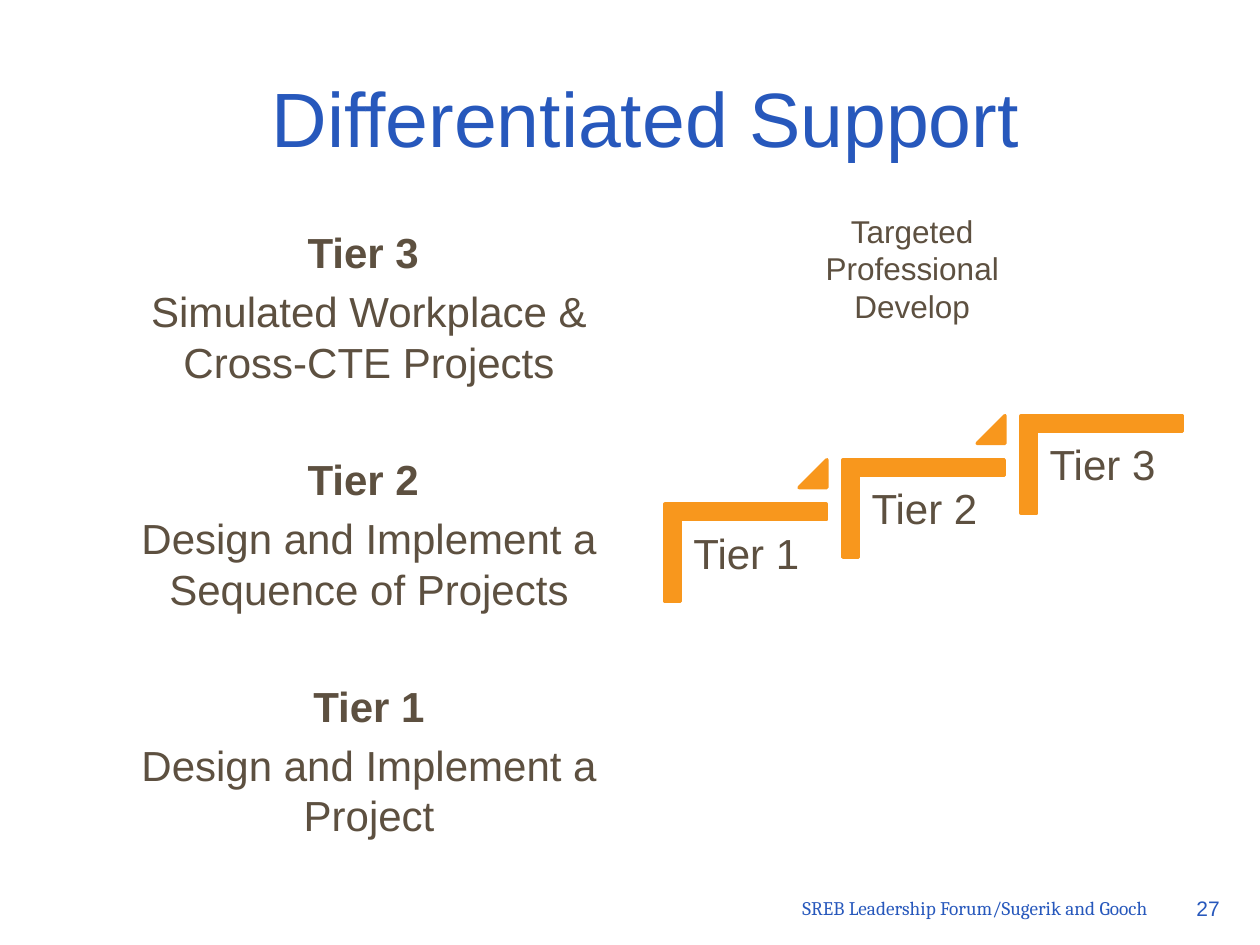
"""Build the Differentiated Support slide with its staircase of three tiers."""
from dataclasses import dataclass

from pptx import Presentation
from pptx import util as u
from pptx.dml import color
from pptx.enum import shapes, text

BLUE, BROWN, ORANGE = "2758BC", "5D5040", "F8971D"
CENTER, RIGHT, LEFT = text.PP_ALIGN.CENTER, text.PP_ALIGN.RIGHT, text.PP_ALIGN.LEFT
TOP, MIDDLE = text.MSO_ANCHOR.TOP, text.MSO_ANCHOR.MIDDLE
STEP_RUN, STEP_RISE = 3.59, 0.89


@dataclass
class Frame:
    left: float
    top: float
    width: float
    height: float

    def lengths(self) -> list[u.Length]:
        return [u.Cm(side) for side in (self.left, self.top, self.width, self.height)]


@dataclass
class Style:
    size: float
    hue: str
    align: text.PP_ALIGN = CENTER
    anchor: text.MSO_ANCHOR = TOP
    font: str = "Arial"


@dataclass
class Tier:
    name: str
    detail: str


TIERS = [
    Tier("Tier 3 ", "Simulated Workplace & Cross-CTE Projects"),
    Tier("Tier 2 ", "Design and Implement a Sequence of Projects"),
    Tier("Tier 1", "Design and Implement a Project"),
]


def rgb(value: str) -> color.RGBColor:
    return color.RGBColor.from_string(value)


def format_paragraph(para, style: Style, bold: bool = False) -> None:
    para.alignment = style.align
    for span in para.runs:
        span.font.size = u.Pt(style.size)
        span.font.name = style.font
        span.font.bold = bold
        span.font.color.rgb = rgb(style.hue)


def add_text(parent, frame: Frame, words: str, style: Style):
    box = parent.add_textbox(*frame.lengths())
    box.text_frame.word_wrap = True
    box.text_frame.vertical_anchor = style.anchor
    box.text_frame.text = words
    for para in box.text_frame.paragraphs:
        format_paragraph(para, style)
    return box


def add_tier_list(page, frame: Frame, tiers: list[Tier]) -> None:
    style = Style(24, BROWN)
    lines = [line for tier in tiers for line in (tier.name, tier.detail)]
    box = add_text(page.shapes, frame, "\n".join(lines), style)
    for index, para in enumerate(box.text_frame.paragraphs):
        is_name = index % 2 == 0
        format_paragraph(para, style, bold=is_name)
        if index:
            para.space_before = u.Pt(38.5 if is_name else 4.8)


def add_orange_shape(parent, kind, frame: Frame, adjustments: list[float]):
    shape = parent.add_shape(kind, *frame.lengths())
    for index, value in enumerate(adjustments):
        shape.adjustments[index] = value
    shape.shadow.inherit = False
    shape.fill.solid()
    shape.fill.fore_color.rgb = rgb(ORANGE)
    shape.line.color.rgb = rgb(ORANGE)
    shape.line.width = u.Pt(2)
    return shape


def add_staircase(page, names: list[str]) -> None:
    stairs = page.shapes.add_group_shape().shapes
    for index, name in enumerate(names):
        left, top = 14.05 + index * STEP_RUN, 9.52 - index * STEP_RISE
        corner = add_orange_shape(stairs, shapes.MSO_SHAPE.CORNER,
                                  Frame(left, top, 1.96, 3.25), [0.16, 0.16])
        corner.rotation = 90
        label = add_text(stairs, Frame(left - 0.32, top + 0.97, 2.95, 2.59),
                         name, Style(24, BROWN, LEFT)).text_frame
        label.margin_left = label.margin_right = u.Cm(0.25)
        label.margin_top = label.margin_bottom = u.Cm(0.25)
        label.paragraphs[0].line_spacing = 0.9
        if index < len(names) - 1:
            add_orange_shape(stairs, shapes.MSO_SHAPE.ISOSCELES_TRIANGLE,
                             Frame(left + 2.06, top - 0.25, 0.56, 0.56), [1])


def main() -> None:
    deck = Presentation()
    deck.slide_width, deck.slide_height = u.Cm(25.4), u.Cm(19.05)
    page = deck.slides.add_slide(deck.slide_layouts[6])
    add_text(page.shapes, Frame(2.21, 0.76, 21.62, 3.18),
             "Differentiated Support", Style(44, BLUE, anchor=MIDDLE))
    add_tier_list(page, Frame(2.21, 4.45, 10.46, 12.57), TIERS)
    add_staircase(page, [tier.name.strip() for tier in reversed(TIERS)])
    add_text(page.shapes, Frame(12.9, 17.73, 10.49, 1.14),
             "SREB Leadership Forum/Sugerik and Gooch",
             Style(11, BLUE, RIGHT, MIDDLE, "Cambria"))
    add_text(page.shapes, Frame(23.39, 17.73, 1.45, 1.14), "27",
             Style(12, BLUE, RIGHT, MIDDLE))
    add_text(page.shapes, Frame(15.42, 4.14, 5.94, 2.57),
             "Targeted Professional Develop", Style(18, BROWN))
    deck.save("out.pptx")


if __name__ == "__main__":
    main()
